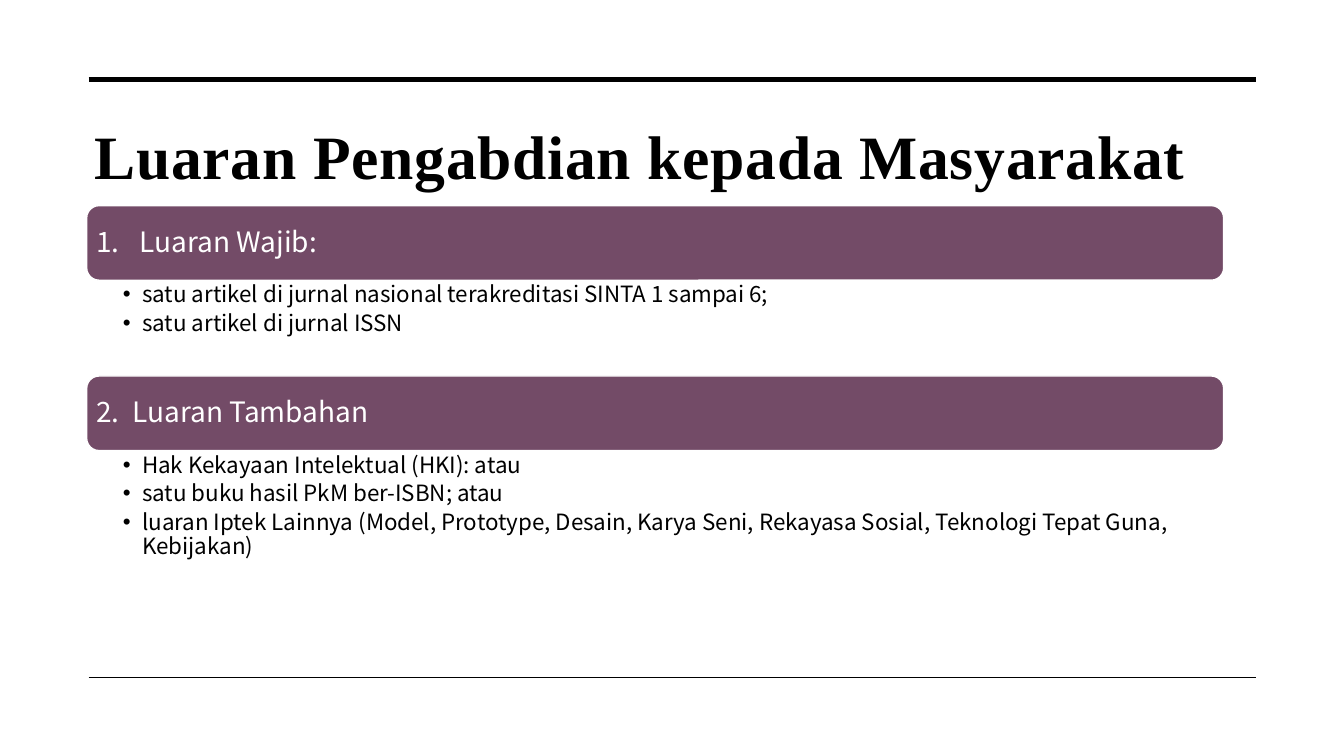
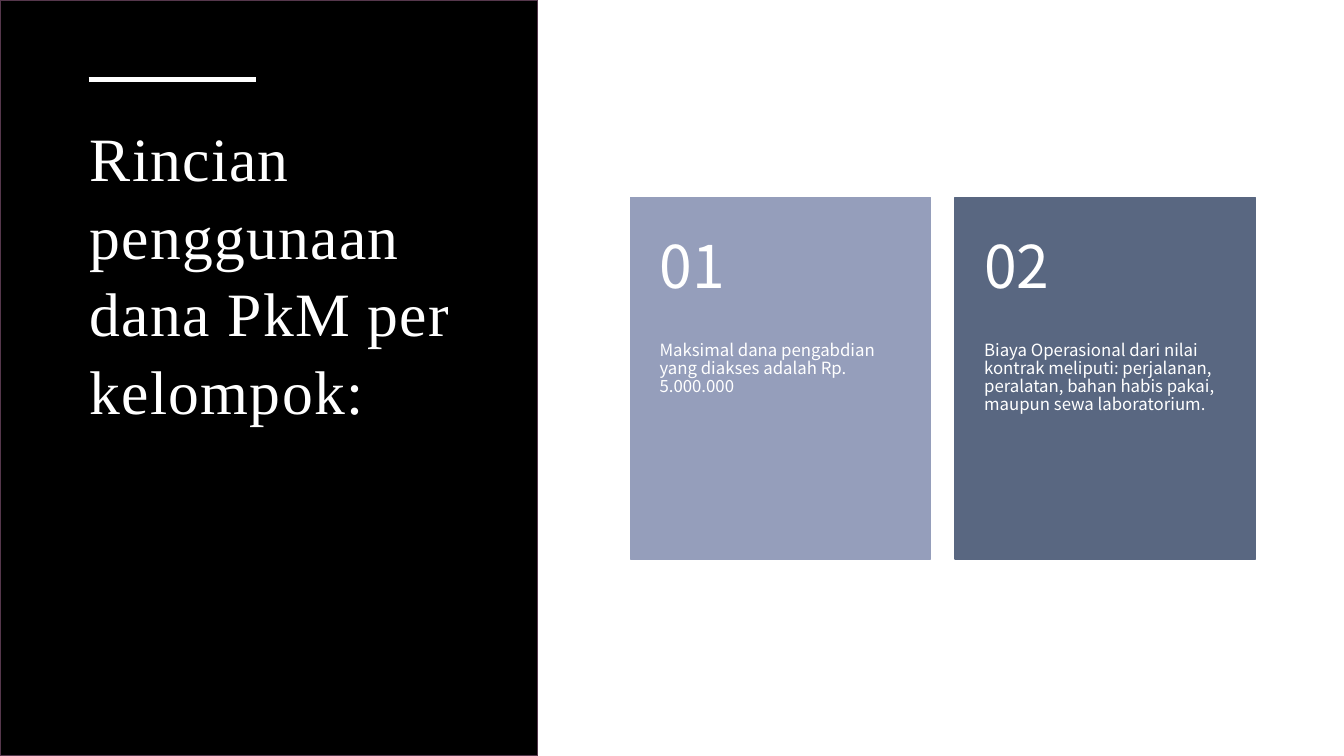
import pptx
import pptx.dml.color
import pptx.enum.shapes
import pptx.enum.text
import pptx.oxml
import pptx.oxml.ns
import pptx.util

COLORS = {
    "black": "000000",
    "white": "FFFFFF",
    "plum": "734B67",
    "dark plum": "55374C",
    "lavender": "959EBB",
    "slate": "596781",
}
SERIF = "Times New Roman"
SANS = "Noto Sans CJK JP"
SHAPES = pptx.enum.shapes.MSO_SHAPE
ANCHORS = pptx.enum.text.MSO_ANCHOR
LEFT, RIGHT, RULE_TOP = 6.6, 93.45, 10.53


class Canvas:
    """Holds the style and the current slide; lengths are percent of the slide's size."""

    def __init__(self):
        self.deck = pptx.Presentation()
        self.deck.slide_width = pptx.util.Inches(13.33)
        self.deck.slide_height = pptx.util.Inches(7.5)

    def start_page(self):
        self.page = self.deck.slides.add_slide(self.deck.slide_layouts[3])
        self.bodies = iter(list(self.page.placeholders)[1:])

    def across(self, share):
        return round(self.deck.slide_width * share / 100)

    def down(self, share):
        return round(self.deck.slide_height * share / 100)

    def frame(self, left, top, width, height):
        return self.across(left), self.down(top), self.across(width), self.down(height)

    def color(self, name):
        return pptx.dml.color.RGBColor.from_string(COLORS[name])

    def place(self, box, area):
        box.left, box.top, box.width, box.height = self.frame(*area)

    def fill_text(self, box, lines, size, color, font=SANS, insets=(0, 0, 0, 0),
                  anchor=ANCHORS.TOP, spacing=0.9, after=0, hang=0, bullet=None, bold=False,
                  tracking=0):
        text = box.text_frame
        text.word_wrap = True
        text.auto_size = pptx.enum.text.MSO_AUTO_SIZE.NONE
        text.vertical_anchor = anchor
        text.margin_left, text.margin_top, text.margin_right, text.margin_bottom = map(
            pptx.util.Inches, insets)
        for number, line in enumerate(lines):
            para = text.add_paragraph() if number else text.paragraphs[0]
            para.alignment = pptx.enum.text.PP_ALIGN.LEFT
            para.line_spacing = spacing
            para.space_before = pptx.util.Pt(0)
            para.space_after = pptx.util.Pt(after)
            settings = para._p.get_or_add_pPr()
            settings.set("marL", str(pptx.util.Inches(hang)))
            settings.set("indent", str(-pptx.util.Inches(hang)))
            mark = pptx.oxml.ns.qn("a:buChar" if bullet else "a:buNone")
            element = settings.makeelement(mark, {"char": bullet} if bullet else {})
            settings.append(element)
            span = para.add_run()
            span.text = line
            span.font.name = font
            span.font.size = pptx.util.Pt(size)
            span.font.bold = bold
            span.font.color.rgb = self.color(color)
            if tracking:
                span._r.get_or_add_rPr().set("spc", str(round(tracking * 100)))

    def title(self, words, area, color, **style):
        box = self.page.shapes.title
        self.place(box, area)
        self.fill_text(box, [words], 44, color, SERIF, (0.12, 0.12, 0.12, 0.1), **style)

    def body(self, lines, area, size, color, **style):
        box = next(self.bodies)
        self.place(box, area)
        self.fill_text(box, lines, size, color, **style)

    def block(self, kind, area, fill, outline):
        box = self.page.shapes.add_shape(kind, *self.frame(*area))
        box.shadow.inherit = False
        box.fill.solid()
        box.fill.fore_color.rgb = self.color(fill)
        box.line.color.rgb = self.color(outline)
        box.line.width = pptx.util.Pt(1)
        self.page.shapes._spTree.insert(2, box._element)
        return box

    def rule(self, top, right, color, weight):
        line = self.page.shapes.add_connector(
            pptx.enum.shapes.MSO_CONNECTOR.STRAIGHT,
            self.across(LEFT), self.down(top), self.across(right), self.down(top))
        line.line.color.rgb = self.color(color)
        line.line.width = pptx.util.Pt(weight)
        settings = line._element.spPr
        settings.append(settings.makeelement(pptx.oxml.ns.qn("a:effectLst"), {}))

    def section(self, heading, gap, items, top, bar_height, list_height):
        left, width = 6.45, 84.6
        bar = self.block(SHAPES.ROUNDED_RECTANGLE, (left, top, width, bar_height), "plum", "white")
        self.fill_text(bar, [heading], 20, "white", insets=(0.06, 0.08, 0.08, 0.08),
                       anchor=ANCHORS.MIDDLE, hang=gap)
        self.body(items, (left, top + bar_height, width, list_height), 16, "black",
                  insets=(0.36, 0.03, 0.16, 0.03), after=3.2, hang=0.19, bullet="•")

    def card(self, number, words, left, fill):
        top, width, height, head = 26.13, 22.35, 47.8, 19.1
        box = self.block(SHAPES.RECTANGLE, (left, top, width, height), fill, fill)
        self.fill_text(box, [number], 42, "white", insets=(0.29, 0.18, 0.29, 2.33),
                       anchor=ANCHORS.MIDDLE)
        self.body([words], (left, top + head, width, height - head), 12, "white",
                  insets=(0.29, 0, 0.29, 0.36))


def build_outputs(canvas):
    canvas.start_page()
    canvas.rule(RULE_TOP, RIGHT, "black", 3.5)
    canvas.rule(89.6, RIGHT, "black", 1)
    canvas.title("Luaran Pengabdian kepada Masyarakat", (6.15, 13, 87.7, 11.33), "black",
                 spacing=1.1, bold=True, tracking=0.5)
    sections = [
        ("1.\tLuaran Wajib:", 0.43, 12.67, [
            "satu artikel di jurnal nasional terakreditasi SINTA 1 sampai 6;",
            "satu artikel di jurnal ISSN",
        ]),
        ("2.\tLuaran Tambahan", 0.36, 24.13, [
            "Hak Kekayaan Intelektual (HKI): atau",
            "satu buku hasil PkM ber-ISBN; atau",
            "luaran Iptek Lainnya (Model, Prototype, Desain, Karya Seni, Rekayasa Sosial, "
            "Teknologi Tepat Guna, Kebijakan)",
        ]),
    ]
    top, bar_height = 27.2, 9.87
    for heading, gap, list_height, items in sections:
        canvas.section(heading, gap, items, top, bar_height, list_height)
        top += bar_height + list_height


def build_budget(canvas):
    canvas.start_page()
    canvas.block(SHAPES.RECTANGLE, (0, 0, 40, 100), "black", "dark plum")
    canvas.rule(RULE_TOP, 19.05, "white", 3.5)
    canvas.title("Rincian penggunaan dana PkM per kelompok:", (5.78, 13.8, 30.53, 53.5), "white",
                 spacing=1.05, tracking=0.9)
    cards = [
        ("01", "Maksimal dana pengabdian yang diakses adalah Rp. 5.000.000", "lavender"),
        ("02", "Biaya Operasional dari nilai kontrak meliputi: perjalanan, peralatan, "
               "bahan habis pakai, maupun sewa laboratorium.", "slate"),
    ]
    for column, (number, words, fill) in enumerate(cards):
        canvas.card(number, words, 46.9 + 24.15 * column, fill)


def main():
    canvas = Canvas()
    build_outputs(canvas)
    build_budget(canvas)
    canvas.deck.save("out.pptx")


if __name__ == "__main__":
    main()
